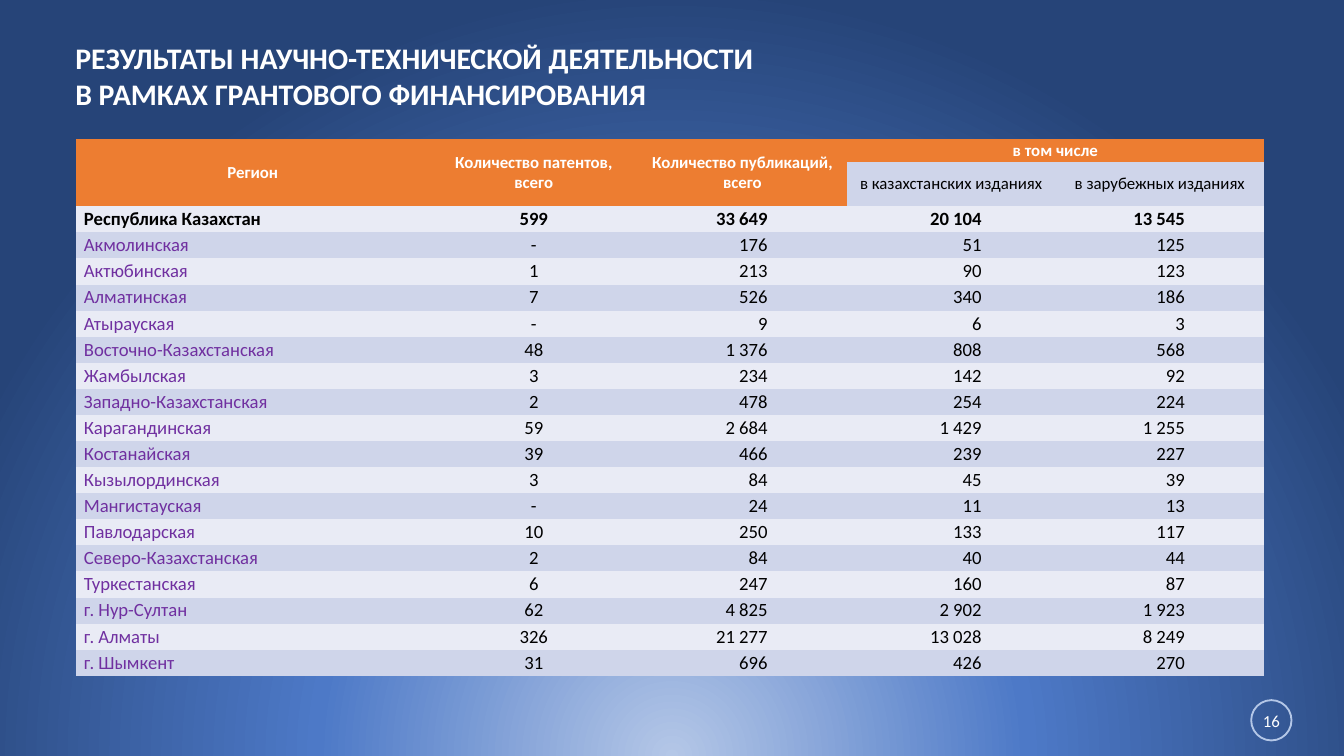
from lxml.etree import SubElement
from pptx import Presentation
from pptx.dml.color import RGBColor
from pptx.enum.shapes import MSO_SHAPE
from pptx.enum.text import MSO_ANCHOR, PP_ALIGN
from pptx.oxml import parse_xml
from pptx.oxml.ns import nsdecls, qn
from pptx.util import Inches, Pt

WHITE = RGBColor(0xFF, 0xFF, 0xFF)
BLACK = RGBColor(0x00, 0x00, 0x00)
PURPLE = RGBColor(0x70, 0x30, 0xA0)
ORANGE = RGBColor(0xED, 0x7D, 0x31)
PALE = RGBColor(0xE9, 0xEB, 0xF5)
BAND = RGBColor(0xCF, 0xD5, 0xEA)
GLOW = RGBColor(0xB4, 0xC7, 0xE7)
BLUE = RGBColor(0x4D, 0x79, 0xC7)
NAVY = RGBColor(0x26, 0x44, 0x78)

FONT = "Calibri"
NO_STYLE = "{2D5ABB26-0587-4C30-8999-92F81FD0307C}"
TITLE = ["РЕЗУЛЬТАТЫ НАУЧНО-ТЕХНИЧЕСКОЙ ДЕЯТЕЛЬНОСТИ",
         "В РАМКАХ ГРАНТОВОГО ФИНАНСИРОВАНИЯ"]
PAGE = "16"
HEADERS = ["Регион", "Количество патентов, всего", "Количество публикаций, всего"]
GROUP = "в том числе"
SUBHEADERS = ["в казахстанских изданиях", "в зарубежных изданиях"]
ROWS = [
    ("Республика Казахстан", "599", "33 649", "20 104", "13 545"),
    ("Акмолинская", "-", "176", "51", "125"),
    ("Актюбинская", "1", "213", "90", "123"),
    ("Алматинская", "7", "526", "340", "186"),
    ("Атырауская", "-", "9", "6", "3"),
    ("Восточно-Казахстанская", "48", "1 376", "808", "568"),
    ("Жамбылская", "3", "234", "142", "92"),
    ("Западно-Казахстанская", "2", "478", "254", "224"),
    ("Карагандинская", "59", "2 684", "1 429", "1 255"),
    ("Костанайская", "39", "466", "239", "227"),
    ("Кызылординская", "3", "84", "45", "39"),
    ("Мангистауская", "-", "24", "11", "13"),
    ("Павлодарская", "10", "250", "133", "117"),
    ("Северо-Казахстанская", "2", "84", "40", "44"),
    ("Туркестанская", "6", "247", "160", "87"),
    ("г. Нур-Султан", "62", "4 825", "2 902", "1 923"),
    ("г. Алматы", "326", "21 277", "13 028", "8 249"),
    ("г. Шымкент", "31", "696", "426", "270"),
]
LEFT, TOP, WIDTH, HEIGHT = 0.565, 1.035, 8.84, 4
REGION_W = 2.63
HEAD_H = [0.17, 0.33]
COLUMNS = [(PP_ALIGN.LEFT, 0.06, 0.06), (PP_ALIGN.CENTER, 0.06, 0.06),
           (PP_ALIGN.RIGHT, 0.06, 0.59), (PP_ALIGN.RIGHT, 0, 0.55),
           (PP_ALIGN.RIGHT, 0.08, 0.59)]


def write(tf, *lines, size=10, color=WHITE, bold=False, align=PP_ALIGN.CENTER, indent=0):
    for i, line in enumerate(lines):
        p = tf.add_paragraph() if i else tf.paragraphs[0]
        p.alignment = align
        if indent:
            pPr = p._p.get_or_add_pPr()
            pPr.set("marL", str(Inches(indent)))
            pPr.set("indent", "0")
        r = p.add_run()
        r.text = line
        r.font.name, r.font.size, r.font.bold = FONT, Pt(size), bold
        r.font.color.rgb = color


def fill_cell(cell, text, fill, left=0.06, right=0.06, **fmt):
    cell.fill.solid()
    cell.fill.fore_color.rgb = fill
    cell.margin_left, cell.margin_right = Inches(left), Inches(right)
    cell.vertical_anchor = MSO_ANCHOR.MIDDLE
    write(cell.text_frame, text, **fmt)


def set_background(s):
    stops = "".join(f'<a:gs pos="{pos * 1000}"><a:srgbClr val="{color}"/></a:gs>'
                    for pos, color in ((0, GLOW), (46, BLUE), (100, NAVY)))
    s._element.cSld.insert(0, parse_xml(
        f'<p:bg {nsdecls("p", "a")}><p:bgPr><a:gradFill rotWithShape="1">'
        f'<a:gsLst>{stops}</a:gsLst><a:path path="circle">'
        '<a:fillToRect l="50000" t="130000" r="50000" b="-30000"/></a:path>'
        '</a:gradFill><a:effectLst/></p:bgPr></p:bg>'))


def add_title(s):
    sp = s.shapes.title
    sp.left, sp.top, sp.width, sp.height = map(Inches, (0.2, 0.26, 5.61, 0.61))
    tf = sp.text_frame
    tf.word_wrap = False
    tf.vertical_anchor = MSO_ANCHOR.MIDDLE
    tf.margin_left = tf.margin_right = Inches(0.07)
    tf.margin_top = tf.margin_bottom = Inches(0.04)
    write(tf, *TITLE, size=16, bold=True, align=PP_ALIGN.LEFT, indent=0.29)


def add_results(s):
    n_head, n_cols = len(HEAD_H), len(COLUMNS)
    table = s.shapes.add_table(n_head + len(ROWS), n_cols,
                               *map(Inches, (LEFT, TOP, WIDTH, HEIGHT))).table
    table.first_row = table.horz_banding = False
    tblPr = table._tbl.tblPr
    for style in tblPr.findall(qn("a:tableStyleId")):
        tblPr.remove(style)
    SubElement(tblPr, qn("a:tableStyleId")).text = NO_STYLE

    for i, col in enumerate(table.columns):
        col.width = Inches((WIDTH - REGION_W) / (n_cols - 1) if i else REGION_W)
    row_h = (HEIGHT - sum(HEAD_H)) / len(ROWS)
    for i, row in enumerate(table.rows):
        row.height = Inches(HEAD_H[i] if i < n_head else row_h)
    for cell in table.iter_cells():
        cell.margin_top = cell.margin_bottom = 0

    for c, text in enumerate(HEADERS):
        table.cell(0, c).merge(table.cell(1, c))
        fill_cell(table.cell(0, c), text, ORANGE, size=9, bold=True)
    first = len(HEADERS)
    table.cell(0, first).merge(table.cell(0, n_cols - 1))
    fill_cell(table.cell(0, first), GROUP, ORANGE, size=9, bold=True)
    for c, text in enumerate(SUBHEADERS, first):
        fill_cell(table.cell(1, c), text, BAND, size=9, color=BLACK)

    for i, values in enumerate(ROWS):
        for c, (text, (align, left, right)) in enumerate(zip(values, COLUMNS)):
            fill_cell(table.cell(n_head + i, c), text, BAND if i % 2 else PALE,
                      left, right, align=align, bold=i == 0,
                      color=PURPLE if i and c == 0 else BLACK)


def add_page_number(s):
    sp = s.shapes.add_shape(MSO_SHAPE.OVAL, *map(Inches, (9.31, 5.21, 0.3, 0.3)))
    sp.shadow.inherit = False
    sp.fill.background()
    sp.line.color.rgb = GLOW
    sp.line.width = Pt(1)
    tf = sp.text_frame
    tf.margin_left = tf.margin_right = tf.margin_top = tf.margin_bottom = 0
    tf.vertical_anchor = MSO_ANCHOR.MIDDLE
    tf.word_wrap = False
    write(tf, PAGE, size=9)


def main():
    prs = Presentation()
    prs.slide_width, prs.slide_height = Inches(10), Inches(5.625)
    s = prs.slides.add_slide(prs.slide_layouts[5])
    set_background(s)
    add_title(s)
    add_results(s)
    add_page_number(s)
    prs.save("out.pptx")


if __name__ == "__main__":
    main()
